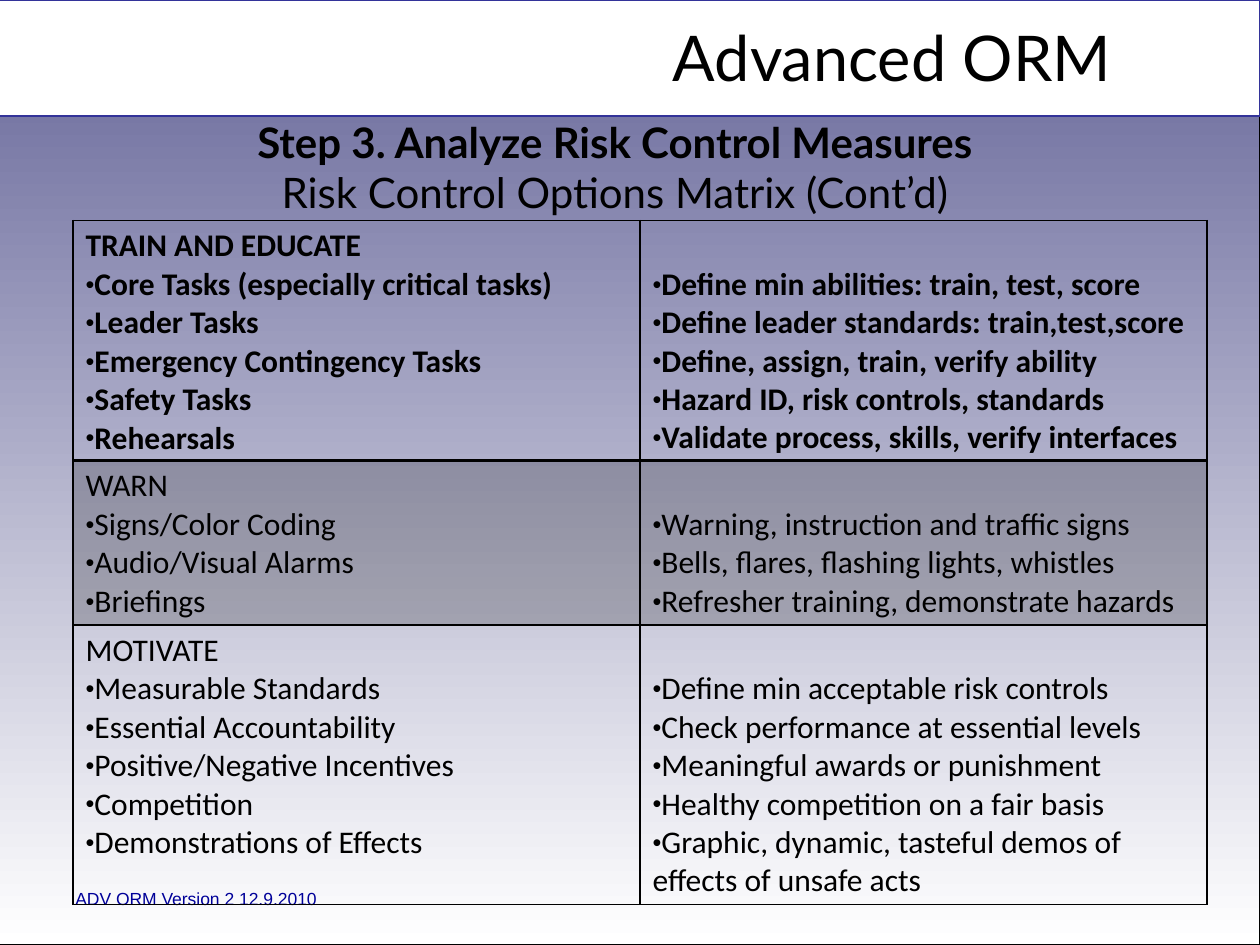
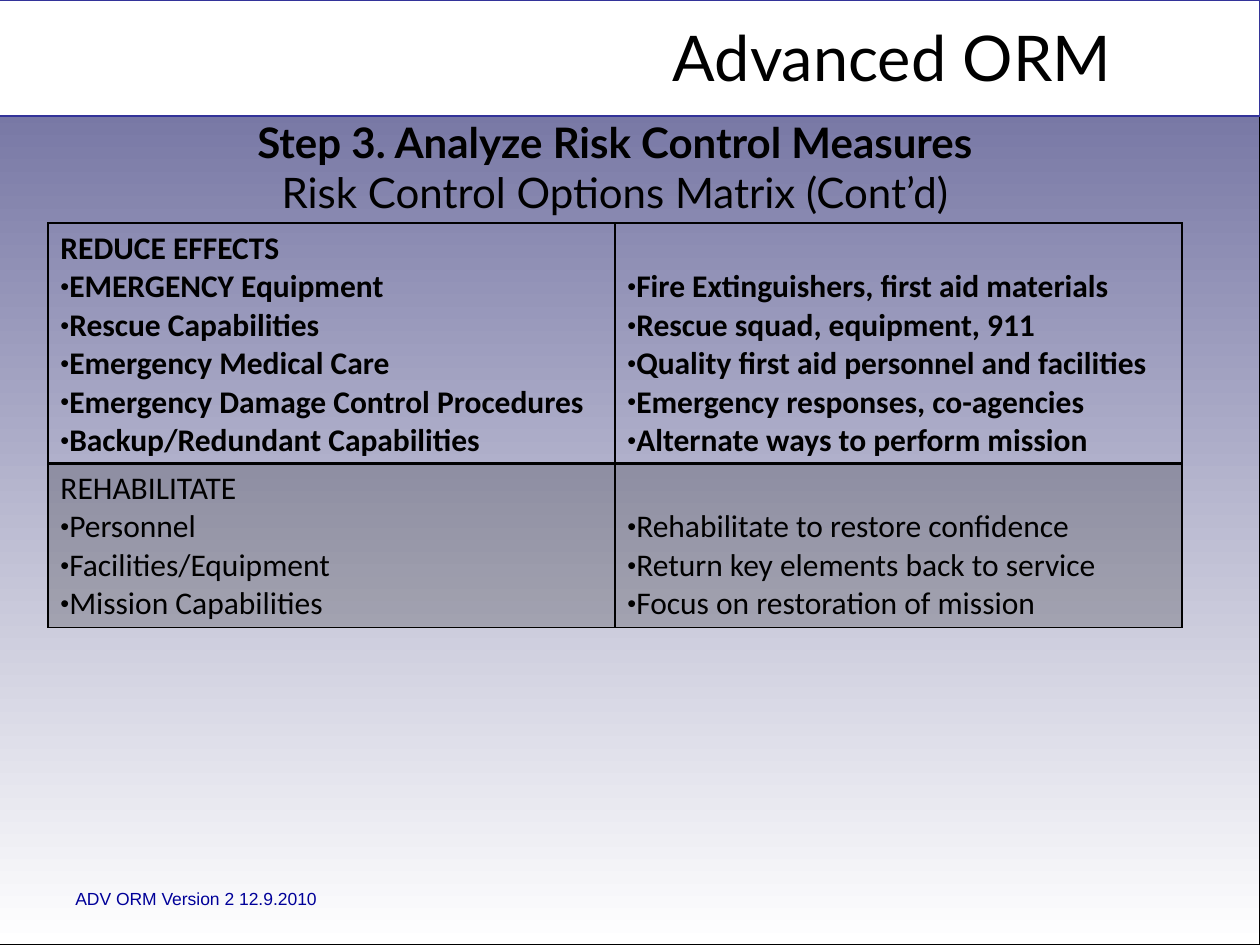
"""Build two risk control matrix slides on a 100 by 75 grid."""
from lxml.etree import SubElement
from pptx import Presentation
from pptx.dml.color import RGBColor
from pptx.enum.shapes import MSO_SHAPE
from pptx.enum.text import MSO_ANCHOR, PP_ALIGN
from pptx.oxml import parse_xml
from pptx.oxml.ns import nsdecls, qn
from pptx.util import Inches, Pt

COLORS = {"ink": "000000", "sky": "666699", "paper": "FFFFFF",
          "band_edge": "333399", "footer": "000099"}
COLUMNS, ROWS = 100, 75
UNIT = Inches(10) // COLUMNS
CELL_PAD, LINE_HEIGHT = 0.5, 3.05
SHADE_PERCENT = 20

TRAIN = ("TRAIN AND EDUCATE", [
    ("Core Tasks (especially critical tasks)", "Define min abilities: train, test, score"),
    ("Leader Tasks", "Define leader standards: train,test,score"),
    ("Emergency Contingency Tasks", "Define, assign, train, verify ability"),
    ("Safety Tasks", "Hazard ID, risk controls, standards"),
    ("Rehearsals", "Validate process, skills, verify interfaces")])
WARN = ("WARN", [
    ("Signs/Color Coding", "Warning, instruction and traffic signs"),
    ("Audio/Visual Alarms", "Bells, flares, flashing lights, whistles"),
    ("Briefings", "Refresher training, demonstrate hazards")])
MOTIVATE = ("MOTIVATE", [
    ("Measurable Standards", "Define min acceptable risk controls"),
    ("Essential Accountability", "Check performance at essential levels"),
    ("Positive/Negative Incentives", "Meaningful awards or punishment"),
    ("Competition", "Healthy competition on a fair basis"),
    ("Demonstrations of Effects",
     "Graphic, dynamic, tasteful demos of effects of unsafe acts")])
REDUCE = ("REDUCE EFFECTS", [
    ("EMERGENCY Equipment", "Fire Extinguishers, first aid materials"),
    ("Rescue Capabilities", "Rescue squad, equipment, 911"),
    ("Emergency Medical Care", "Quality first aid personnel and facilities"),
    ("Emergency Damage Control Procedures", "Emergency responses, co-agencies"),
    ("Backup/Redundant Capabilities", "Alternate ways to perform mission")])
REHABILITATE = ("REHABILITATE", [
    ("Personnel", "Rehabilitate to restore confidence"),
    ("Facilities/Equipment", "Return key elements back to service"),
    ("Mission Capabilities", "Focus on restoration of mission")])


def color(name):
    return RGBColor.from_string(COLORS[name])


def grid(*cells):
    return [round(cell * UNIT) for cell in cells]


def style_runs(paragraph, font, size, ink="ink", bold=False):
    for run in paragraph.runs:
        run.font.name, run.font.size, run.font.bold = font, Pt(size), bold
        run.font.color.rgb = color(ink)


def add_panel(slide, height, edge):
    panel = slide.shapes.add_shape(MSO_SHAPE.RECTANGLE, *grid(-1.2, 0, COLUMNS + 1.2, height))
    panel.shadow.inherit = False
    panel.line.color.rgb, panel.line.width = color(edge), Pt(0.75)
    return panel


def add_label(slide, box, text, font, size, ink="ink", centred=True):
    frame = slide.shapes.add_textbox(*grid(*box)).text_frame
    frame.word_wrap = True
    frame.text = text
    if centred:
        frame.vertical_anchor = MSO_ANCHOR.MIDDLE
        frame.paragraphs[0].alignment = PP_ALIGN.CENTER
    style_runs(frame.paragraphs[0], font, size, ink)
    return frame.paragraphs[0]


def add_backdrop(slide):
    sky = add_panel(slide, ROWS, "ink")
    sky.fill.gradient()
    sky.fill.gradient_angle = 270
    for stop, position, name in zip(sky.fill.gradient_stops, (0, 1), ("sky", "paper")):
        stop.position, stop.color.rgb = position, color(name)
    band = add_panel(slide, 9.2, "band_edge")
    band.fill.solid()
    band.fill.fore_color.rgb = color("paper")
    add_label(slide, (41.6, 1.6, 58.4, 5.7), "Advanced ORM", "Lato", 36)
    add_label(slide, (5, 70, 80, 2.7), "ADV ORM Version 2 12.9.2010",
              "Arial", 10, "footer", centred=False)
    heading = add_label(
        slide, (4.4, 10.3, 88.8, 5.9),
        "Step 3. Analyze Risk Control Measures\vRisk Control Options Matrix (Cont’d)",
        "Lato", 24)
    heading.runs[0].font.bold = True


def add_bullet(paragraph):
    properties = paragraph._p.get_or_add_pPr()
    properties.set("marL", "0")
    properties.set("indent", "0")
    tint = SubElement(properties, qn("a:buClr"))
    SubElement(tint, qn("a:srgbClr"), val=COLORS["ink"])
    SubElement(properties, qn("a:buSzPct"), val="80000")
    SubElement(properties, qn("a:buFont"), typeface="Arial")
    SubElement(properties, qn("a:buChar"), char="•")


def set_borders(cell, top, bottom):
    properties = cell._tc.get_or_add_tcPr()
    for place, (side, points) in enumerate(zip("LRTB", (1, 1, top, bottom))):
        properties.insert(place, parse_xml(
            f'<a:ln{side} {nsdecls("a")} w="{Pt(points)}"><a:solidFill>'
            f'<a:srgbClr val="{COLORS["ink"]}"/></a:solidFill></a:ln{side}>'))


def fill_cell(cell, heading, items, bold, shaded):
    cell.margin_top, cell.margin_bottom = grid(
        CELL_PAD if heading else CELL_PAD + LINE_HEIGHT, CELL_PAD)
    cell.text_frame.text = "\n".join(heading + items)
    for number, paragraph in enumerate(cell.text_frame.paragraphs):
        if number >= len(heading):
            add_bullet(paragraph)
        style_runs(paragraph, "Calibri", 18, bold=bold)
    if shaded:
        cell.fill.solid()
        cell.fill.fore_color.rgb = color("ink")
        tint = cell._tc.tcPr.find(f'{qn("a:solidFill")}/{qn("a:srgbClr")}')
        SubElement(tint, qn("a:alpha"), val=str(SHADE_PERCENT * 1000))
    else:
        cell.fill.background()


def add_matrix(slide, left, top, groups, heights):
    matrix = slide.shapes.add_table(
        len(groups), 2, *grid(left, top, 90, sum(heights))).table
    matrix.first_row = matrix.horz_banding = False
    for index, ((heading, pairs), height) in enumerate(zip(groups, heights)):
        matrix.rows[index].height = grid(height)[0]
        controls, examples = zip(*pairs)
        for column, (title, items) in enumerate((([heading], controls), ([], examples))):
            cell = matrix.cell(index, column)
            fill_cell(cell, title, list(items), bold=index == 0, shaded=index == 1)
            set_borders(cell, 2 if index == 1 else 1, 2 if index == 0 else 1)


def main():
    deck = Presentation()
    deck.slide_width, deck.slide_height = grid(COLUMNS, ROWS)
    for left, top, groups, heights in (
            (5.8, 17.5, (TRAIN, WARN, MOTIVATE), (19, 13, 22.2)),
            (3.8, 17.7, (REDUCE, REHABILITATE), (19, 13))):
        slide = deck.slides.add_slide(deck.slide_layouts[6])
        add_backdrop(slide)
        add_matrix(slide, left, top, groups, heights)
    deck.save("out.pptx")


if __name__ == "__main__":
    main()
